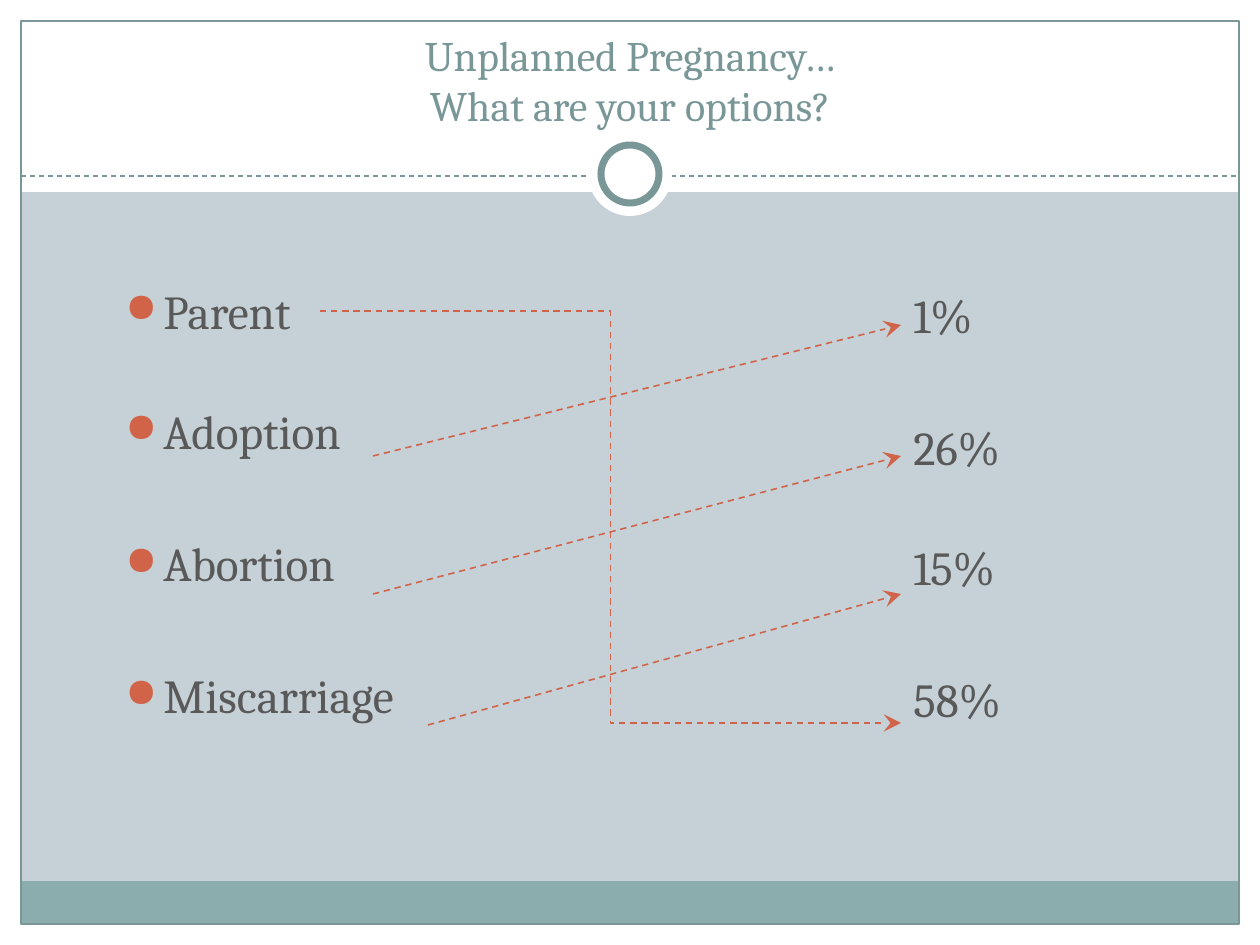
from lxml.etree import SubElement
from pptx import Presentation
from pptx.dml.color import RGBColor
from pptx.enum.dml import MSO_LINE
from pptx.enum.shapes import MSO_CONNECTOR, MSO_SHAPE
from pptx.enum.text import MSO_ANCHOR, PP_ALIGN
from pptx.oxml.ns import qn
from pptx.util import Emu, Pt

PIXELS_PER_INCH = 126
WIDTH, HEIGHT = 1260, 945
MARGIN = 21
FONT = "Cambria"
WHITE, MIST, TEAL, SLATE = "FFFFFF", "C5D1D7", "8CADAE", "7A9798"
RUST, GRAY = "D16349", "595959"


def px(value):
    return Emu(round(value * 914400 / PIXELS_PER_INCH))


def color(value):
    return RGBColor.from_string(value)


def add_shape(slide, kind, box, fill=None, line=None, line_width=0.75):
    shape = slide.shapes.add_shape(kind, *map(px, box))
    shape.shadow.inherit = False
    if fill:
        shape.fill.solid()
        shape.fill.fore_color.rgb = color(fill)
    else:
        shape.fill.background()
    if line:
        shape.line.color.rgb = color(line)
        shape.line.width = Pt(line_width)
    else:
        shape.line.fill.background()


def add_dashed_line(slide, start, end, line, width,
                    kind=MSO_CONNECTOR.STRAIGHT, arrow=False):
    connector = slide.shapes.add_connector(kind, *map(px, start + end))
    connector.line.color.rgb = color(line)
    connector.line.width = Pt(width)
    connector.line.dash_style = MSO_LINE.DASH
    properties = connector._element.spPr
    if arrow:
        SubElement(properties.find(qn("a:ln")), qn("a:tailEnd"),
                   type="stealth", w="lg", len="lg")
    SubElement(properties, qn("a:effectLst"))


def add_bullet(paragraph):
    properties = paragraph._p.get_or_add_pPr()
    indent = px(38)
    properties.set("marL", str(indent))
    properties.set("indent", str(-indent))
    bullet_color = SubElement(properties, qn("a:buClr"))
    SubElement(bullet_color, qn("a:srgbClr"), val=RUST)
    SubElement(properties, qn("a:buSzPct"), val="85000")
    SubElement(properties, qn("a:buChar"), char="●")


def add_text(slide, box, paragraphs, size, font_color, top_inset=6, gaps=None,
             align=PP_ALIGN.LEFT, anchor=MSO_ANCHOR.TOP, bullets=False):
    frame = slide.shapes.add_textbox(*map(px, box)).text_frame
    frame.word_wrap = True
    frame.vertical_anchor = anchor
    frame.margin_top = px(top_inset)
    for index, text in enumerate(paragraphs):
        paragraph = frame.paragraphs[0] if index == 0 else frame.add_paragraph()
        paragraph.text = text
        paragraph.alignment = align
        paragraph.font.size = Pt(size)
        if gaps and index:
            paragraph.space_before = Pt(gaps[index - 1])
        for run in paragraph.runs:
            run.font.name = FONT
            run.font.size = Pt(size)
            run.font.color.rgb = color(font_color)
        if bullets:
            add_bullet(paragraph)


def add_frame(slide):
    slide.background.fill.solid()
    slide.background.fill.fore_color.rgb = color(MIST)
    inner_width, inner_height = WIDTH - 2 * MARGIN, HEIGHT - 2 * MARGIN
    borders = [
        (0, HEIGHT - MARGIN, WIDTH, MARGIN),
        (0, 0, WIDTH, 192),
        (0, 0, MARGIN, HEIGHT),
        (WIDTH - MARGIN, 0, MARGIN, HEIGHT),
    ]
    for box in borders:
        add_shape(slide, MSO_SHAPE.RECTANGLE, box, fill=WHITE)
    add_shape(slide, MSO_SHAPE.RECTANGLE, (MARGIN, 881, inner_width, 43), fill=TEAL)
    add_shape(slide, MSO_SHAPE.RECTANGLE,
              (MARGIN, MARGIN, inner_width, inner_height), line=SLATE)
    add_dashed_line(slide, (MARGIN, 176), (WIDTH - MARGIN, 176), SLATE, 0.75)
    add_shape(slide, MSO_SHAPE.OVAL, (588, 132, 84, 84), fill=WHITE)
    add_shape(slide, MSO_SHAPE.OVAL, (601, 145, 58, 58),
              fill=WHITE, line=SLATE, line_width=4)


def add_arrows(slide):
    arrow_end = 901
    arrows = [
        ((373, 456), 325, MSO_CONNECTOR.STRAIGHT),
        ((320, 311), 723, MSO_CONNECTOR.ELBOW),
        ((428, 725), 594, MSO_CONNECTOR.STRAIGHT),
        ((373, 594), 456, MSO_CONNECTOR.STRAIGHT),
    ]
    for start, end_y, kind in arrows:
        add_dashed_line(slide, start, (arrow_end, end_y), RUST, 0.9, kind, arrow=True)


def main():
    presentation = Presentation()
    presentation.slide_width, presentation.slide_height = px(WIDTH), px(HEIGHT)
    slide = presentation.slides.add_slide(presentation.slide_layouts[6])
    add_frame(slide)
    add_text(slide, (42, 32, 1176, 104),
             ["Unplanned Pregnancy…\vWhat are your options?"], 24, SLATE,
             align=PP_ALIGN.CENTER, anchor=MSO_ANCHOR.BOTTOM)
    narrow, wide = 36.3, 43.1
    add_text(slide, (113, 210, 1100, 630),
             ["Parent", "Adoption", "Abortion", "Miscarriage"], 27, GRAY,
             top_inset=72, gaps=[narrow, wide, wide], bullets=True)
    add_text(slide, (901, 214, 160, 609), ["1%", "26%", "15%", "58%"], 27, GRAY,
             top_inset=72, gaps=[wide, narrow, wide])
    add_arrows(slide)
    presentation.save("out.pptx")


if __name__ == "__main__":
    main()
